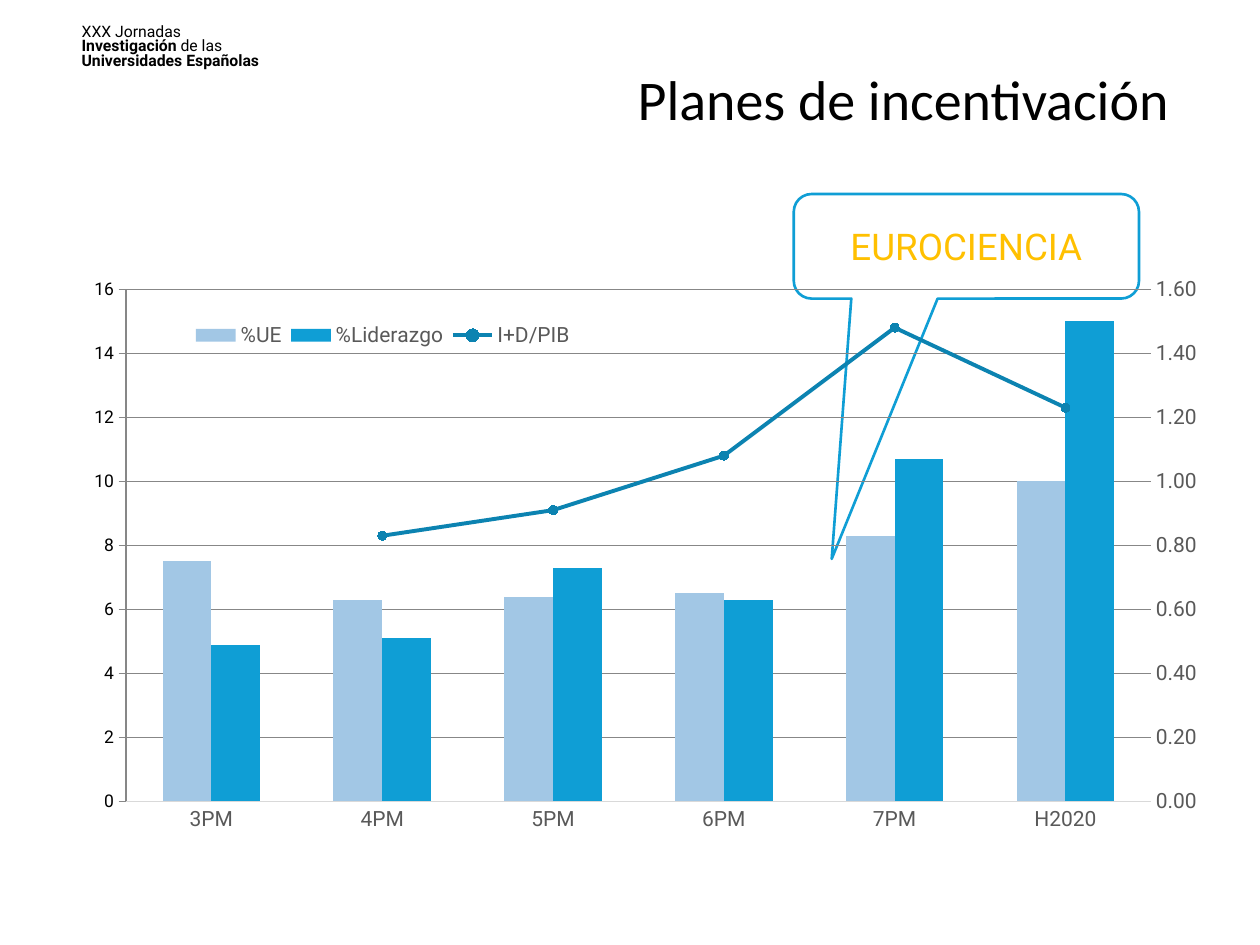
from dataclasses import dataclass

import pptx
import pptx.chart.axis
import pptx.chart.data
import pptx.dml.color
import pptx.enum.chart
import pptx.enum.shapes
import pptx.enum.text
import pptx.oxml
import pptx.oxml.ns
import pptx.util
from pptx.util import Inches

qn = pptx.oxml.ns.qn
ALIGN = pptx.enum.text.PP_ALIGN
ANCHOR = pptx.enum.text.MSO_ANCHOR
NAMESPACES = pptx.oxml.ns.nsdecls("c", "a")


@dataclass(frozen=True)
class Theme:
    body_font: str = "Roboto"
    title_font: str = "Calibri"
    text: str = "000000"
    muted: str = "595959"
    axis: str = "D9D9D9"
    paper: str = "FFFFFF"
    accent: str = "0F9ED5"
    light: str = "A2C7E5"
    trend: str = "0C83B1"
    highlight: str = "FFC000"
    header_size: int = 9
    chart_size: int = 10
    label_size: int = 12
    callout_size: int = 21
    title_size: int = 32


THEME = Theme()


def rgb(value):
    return pptx.dml.color.RGBColor.from_string(value)


def style_font(font, size, color, name=THEME.body_font):
    font.size = pptx.util.Pt(size)
    font.color.rgb = rgb(color)
    font.name = name


def write_text(frame, lines, *, size, color=THEME.text, font=THEME.body_font,
               align=ALIGN.LEFT, anchor=ANCHOR.TOP, spacing=None):
    """Fill a frame; each line is a list of (words, bold) runs."""
    frame.word_wrap = True
    frame.vertical_anchor = anchor
    for number, runs in enumerate(lines):
        paragraph = frame.add_paragraph() if number else frame.paragraphs[0]
        paragraph.alignment = align
        paragraph.line_spacing = spacing
        for words, bold in runs:
            run = paragraph.add_run()
            run.text = words
            run.font.bold = bold
            style_font(run.font, size, color, font)


def add_header(slide, box):
    header = slide.shapes.add_textbox(*box)
    write_text(header.text_frame,
               [[("XXX Jornadas", False)],
                [("Investigación ", True), ("de las", False)],
                [("Universidades Españolas", True)]],
               size=THEME.header_size, spacing=pptx.util.Pt(8.2))


def add_title(slide, box):
    title = slide.shapes.add_textbox(*box)
    write_text(title.text_frame, [[("Planes de incentivación", False)]],
               size=THEME.title_size, font=THEME.title_font,
               align=ALIGN.RIGHT, anchor=ANCHOR.MIDDLE, spacing=0.9)


def add_callout(slide, box):
    callout = slide.shapes.add_shape(
        pptx.enum.shapes.MSO_SHAPE.ROUNDED_RECTANGULAR_CALLOUT, *box)
    callout.shadow.inherit = False
    for index, value in enumerate((-0.39, 2.99, 0.17)):
        callout.adjustments[index] = value
    callout.fill.solid()
    callout.fill.fore_color.rgb = rgb(THEME.paper)
    callout.line.color.rgb = rgb(THEME.accent)
    callout.line.width = pptx.util.Pt(1.5)
    write_text(callout.text_frame, [[("EUROCIENCIA", False)]],
               size=THEME.callout_size, color=THEME.highlight,
               align=ALIGN.CENTER, anchor=ANCHOR.MIDDLE)


def chart_xml(tag, content):
    return pptx.oxml.parse_xml(f"<c:{tag} {NAMESPACES}>{content}</c:{tag}>")


def set_layout(parent, index, x, y, w, h, target=""):
    """Place a chart part by fractions of the chart's box."""
    for old in parent.findall(qn("c:layout")):
        parent.remove(old)
    places = "".join(f'<c:{tag} val="{value}"/>'
                     for tag, value in zip("xywh", (x, y, w, h)))
    parent.insert(index, chart_xml(
        "layout", f'<c:manualLayout>{target}<c:xMode val="edge"/>'
                  f'<c:yMode val="edge"/>{places}</c:manualLayout>'))


def move_to_second_axis(plot_area, series):
    """Turn a column series into a line on a right-hand axis."""
    for tag in ("c:invertIfNegative", "c:spPr"):
        for part in series.findall(qn(tag)):
            series.remove(part)
    line_chart = chart_xml(
        "lineChart", '<c:grouping val="standard"/><c:varyColors val="0"/>'
                     '<c:marker val="1"/><c:axId val="5001"/><c:axId val="5002"/>')
    line_chart.insert(2, series)
    plot_area.find(qn("c:barChart")).addnext(line_chart)
    hidden = chart_xml(
        "catAx", '<c:axId val="5001"/><c:scaling><c:orientation val="minMax"/></c:scaling>'
                 '<c:delete val="1"/><c:axPos val="b"/><c:crossAx val="5002"/>')
    right = chart_xml(
        "valAx", '<c:axId val="5002"/><c:scaling><c:orientation val="minMax"/></c:scaling>'
                 '<c:delete val="0"/><c:axPos val="r"/><c:crossAx val="5001"/>'
                 '<c:crosses val="max"/>')
    plot_area.find(qn("c:valAx")).addnext(right)
    right.addnext(hidden)
    return pptx.chart.axis.ValueAxis(right)


def style_axis(axis):
    axis.has_major_gridlines = False
    axis.major_tick_mark = axis.minor_tick_mark = pptx.enum.chart.XL_TICK_MARK.NONE
    axis.tick_label_position = pptx.enum.chart.XL_TICK_LABEL_POSITION.NEXT_TO_AXIS
    style_font(axis.tick_labels.font, THEME.label_size, THEME.muted)


def style_value_axis(axis, top, step, number_format):
    style_axis(axis)
    axis.minimum_scale, axis.maximum_scale, axis.major_unit = 0, top, step
    axis.tick_labels.number_format = number_format
    axis.tick_labels.number_format_is_linked = False
    axis.format.line.fill.background()


def add_programme_chart(slide, box):
    data = pptx.chart.data.CategoryChartData()
    data.categories = ["3PM", "4PM", "5PM", "6PM", "7PM", "H2020"]
    data.add_series("%UE", (7.5, 6.3, 6.4, 6.5, 8.3, 10))
    data.add_series("%Liderazgo", (4.9, 5.1, 7.3, 6.3, 10.7, 15))
    data.add_series("I+D/PIB", (None, 0.83, 0.91, 1.08, 1.48, 1.23))
    chart = slide.shapes.add_chart(
        pptx.enum.chart.XL_CHART_TYPE.COLUMN_CLUSTERED, *box, data).chart
    chart.has_title = False
    style_font(chart.font, THEME.chart_size, THEME.text)

    # Plot area and see-through background
    chart_body = chart.element.find(qn("c:chart"))
    plot_area = chart_body.find(qn("c:plotArea"))
    right_axis = move_to_second_axis(plot_area, plot_area.findall(".//" + qn("c:ser"))[2])
    set_layout(plot_area, 0, 0.036, 0.036, 0.914, 0.88, '<c:layoutTarget val="inner"/>')
    clear = "<a:noFill/><a:ln><a:noFill/></a:ln>"
    plot_area.append(chart_xml("spPr", clear))
    chart_body.addnext(chart_xml("spPr", clear))

    # Axes
    style_axis(chart.category_axis)
    chart.category_axis.format.line.color.rgb = rgb(THEME.axis)
    chart.category_axis.format.line.width = pptx.util.Pt(0.75)
    style_value_axis(chart.value_axis, 16, 2, "General")
    style_value_axis(right_axis, 1.6, 0.2, "#,##0.00")

    # Columns and trend line
    columns, trend_plot = chart.plots
    columns.gap_width, columns.overlap = 150, 0
    columns.vary_by_categories = False
    for series, color in zip(columns.series, (THEME.light, THEME.accent)):
        series.format.fill.solid()
        series.format.fill.fore_color.rgb = rgb(color)
    trend = trend_plot.series[0]
    trend.smooth = False
    trend.format.line.color.rgb = rgb(THEME.trend)
    trend.format.line.width = pptx.util.Pt(2.25)
    trend.marker.style = pptx.enum.chart.XL_MARKER_STYLE.CIRCLE
    trend.marker.size = 5
    trend.marker.format.fill.solid()
    trend.marker.format.fill.fore_color.rgb = rgb(THEME.trend)
    trend.marker.format.line.color.rgb = rgb(THEME.trend)

    # Legend
    chart.has_legend = True
    chart.legend.position = pptx.enum.chart.XL_LEGEND_POSITION.BOTTOM
    chart.legend.include_in_layout = False
    style_font(chart.legend.font, THEME.label_size, THEME.muted)
    set_layout(chart_body.find(qn("c:legend")), 1, 0.09, 0.08, 0.35, 0.07)


def main():
    deck = pptx.Presentation()
    deck.slide_width, deck.slide_height = Inches(10), Inches(7.5)
    slide = deck.slides.add_slide(deck.slide_layouts[6])
    add_header(slide, (Inches(0.55), Inches(0.16), Inches(1.66), Inches(0.44)))
    add_callout(slide, (Inches(6.3), Inches(1.54), Inches(2.74), Inches(0.83)))
    add_title(slide, (Inches(2.81), Inches(0.09), Inches(6.57), Inches(1.45)))
    add_programme_chart(slide, (Inches(0.68), Inches(2.13), Inches(8.9), Inches(4.62)))
    deck.save("out.pptx")


if __name__ == "__main__":
    main()
